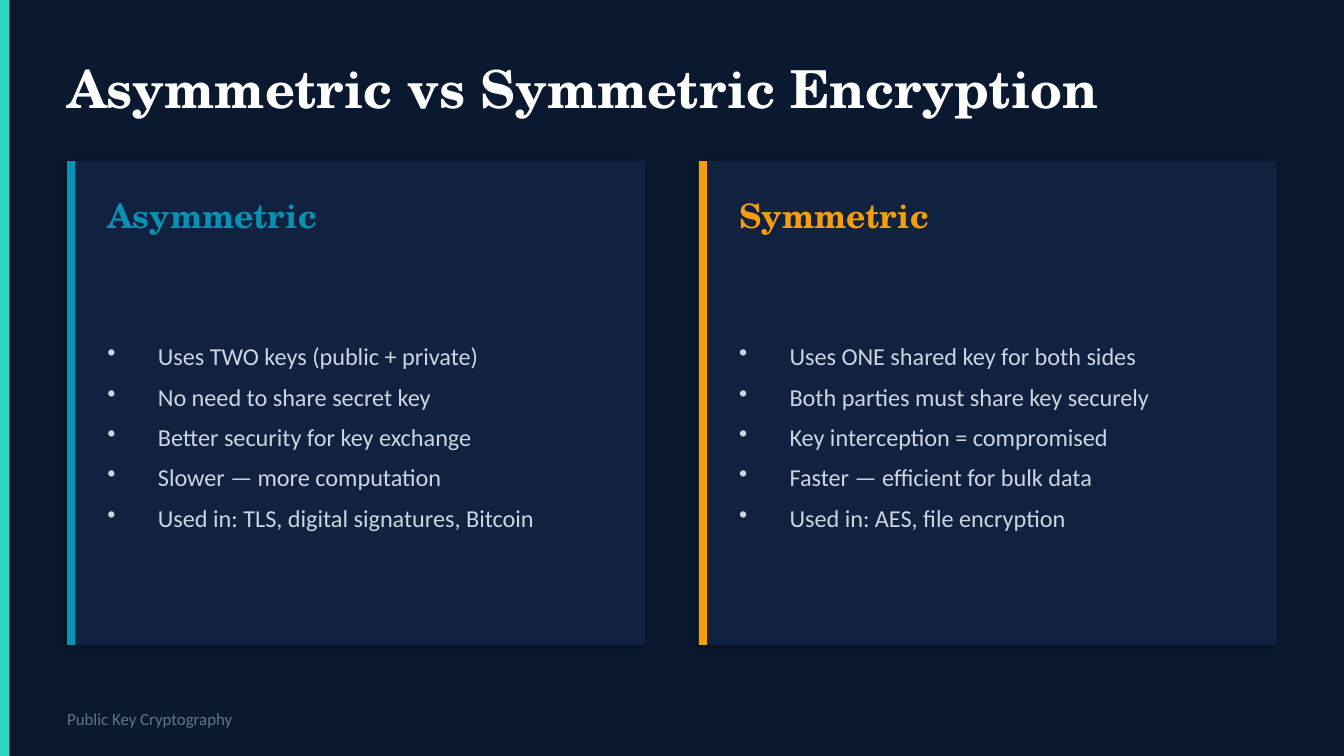
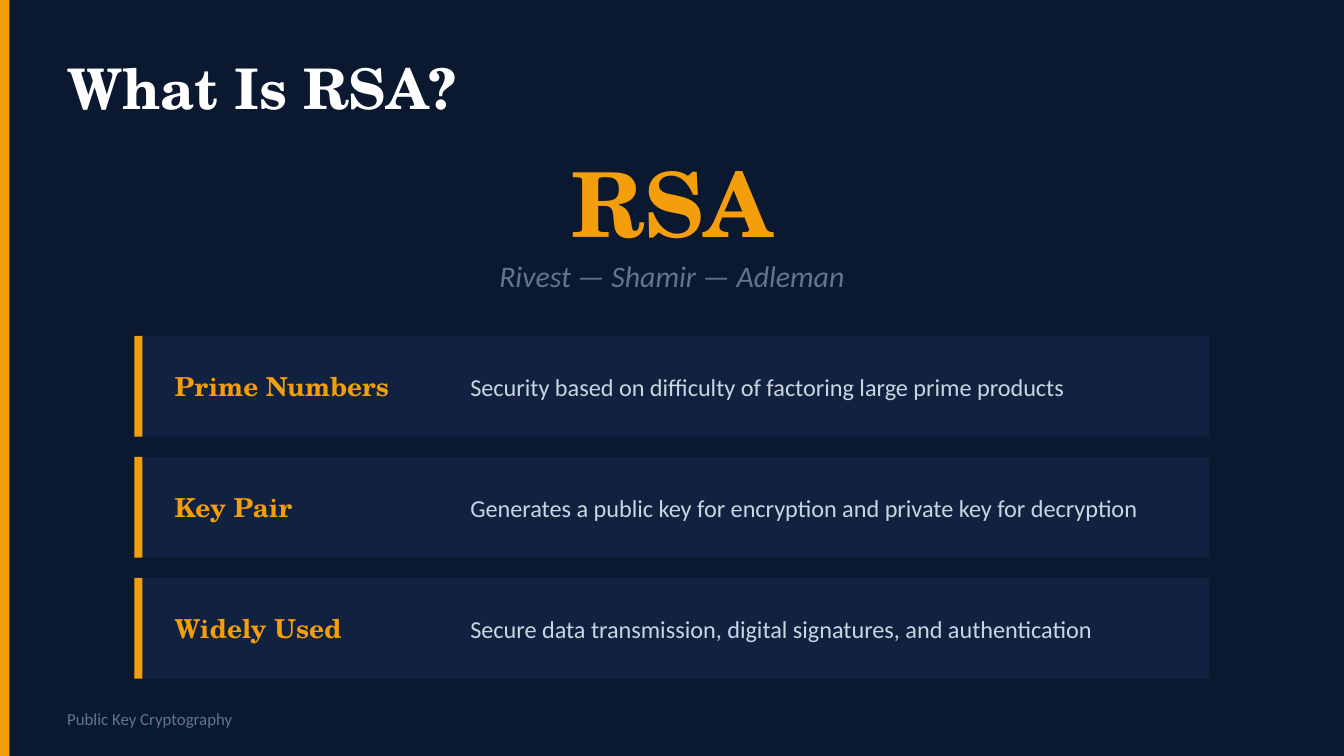
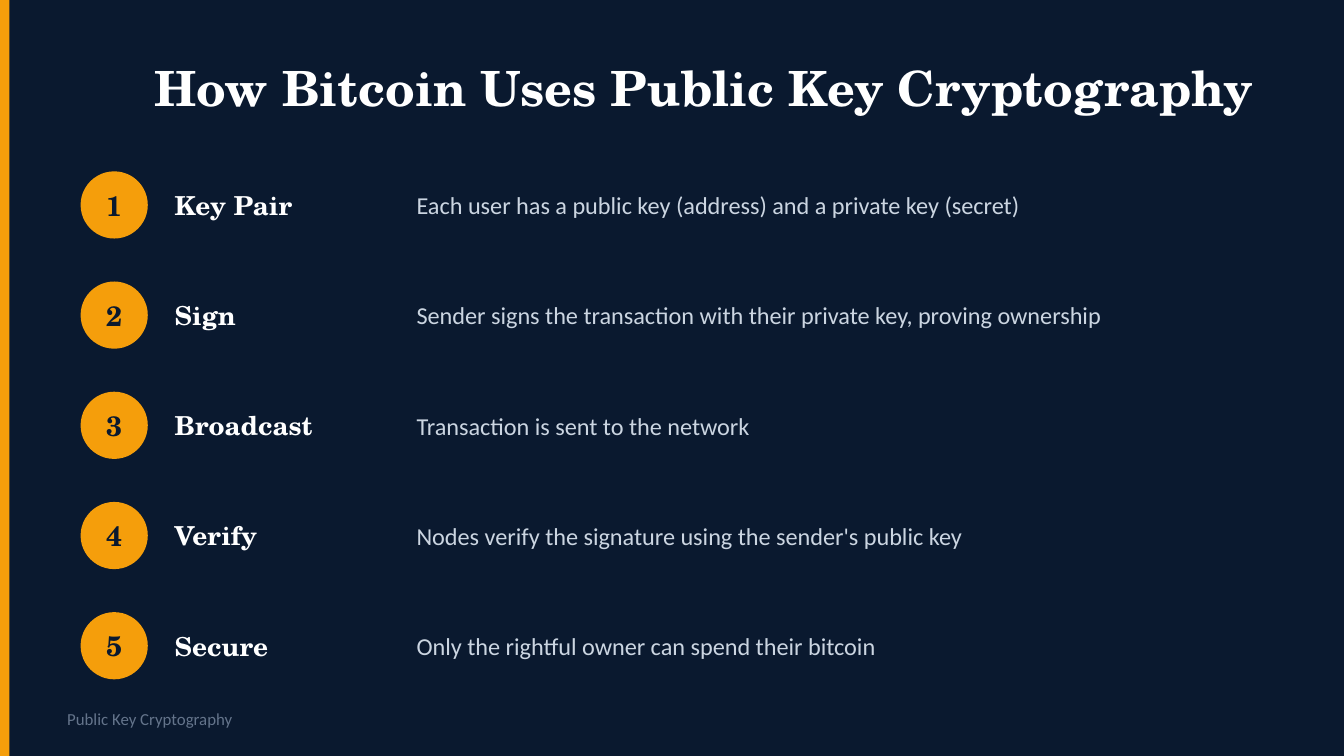
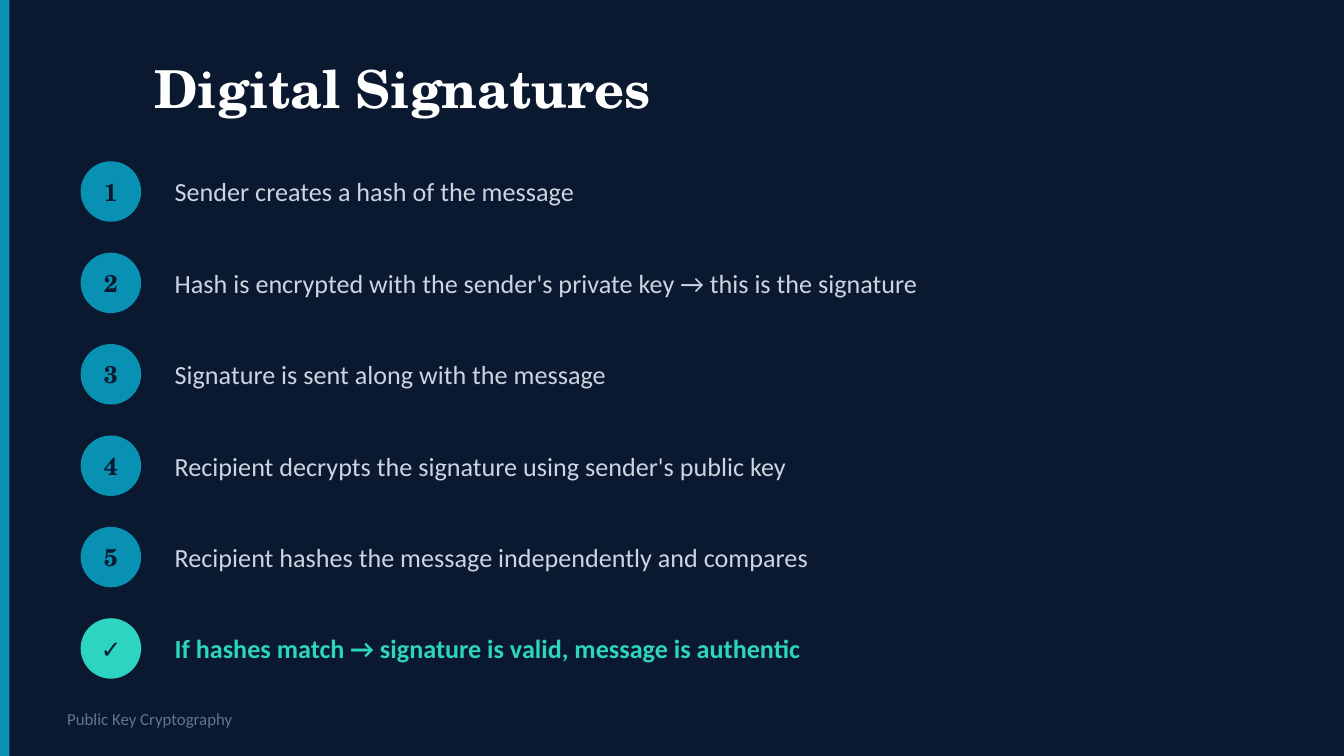
from dataclasses import dataclass
from typing import NamedTuple

import lxml.etree
import pptx
import pptx.dml.color
import pptx.enum.shapes
import pptx.enum.text
import pptx.oxml.ns
import pptx.presentation
import pptx.shapes.autoshape
import pptx.slide
import pptx.util

# The grid: square cells of 0.1 inch, 100 columns by 56.25 rows
CELL = 0.1
COLUMNS, ROWS = 100, 56.25
MARGIN = 5
CONTENT_WIDTH = COLUMNS - 2 * MARGIN
STRIPE_WIDTH = 0.6

NAVY, PANEL = "0A192F", "112240"
WHITE, LIGHT, GREY = "FFFFFF", "CBD5E1", "64748B"
TEAL, BLUE, AMBER = "2DD4BF", "0891B2", "F59E0B"

SERIF, SANS = "TeX Gyre Schola", "Calibri"
CENTER = pptx.enum.text.PP_ALIGN.CENTER
LEFT = pptx.enum.text.PP_ALIGN.LEFT
RECTANGLE = pptx.enum.shapes.MSO_SHAPE.RECTANGLE
OVAL = pptx.enum.shapes.MSO_SHAPE.OVAL


class Box(NamedTuple):
    """A rectangle measured in grid cells."""
    left: float
    top: float
    width: float
    height: float

    def lengths(self) -> list[pptx.util.Length]:
        return [pptx.util.Inches(cells * CELL) for cells in self]


@dataclass(frozen=True)
class Card:
    heading: str
    color: str
    points: list[str]


@dataclass(frozen=True)
class Fact:
    label: str
    text: str


@dataclass(frozen=True)
class Step:
    mark: str
    text: str
    label: str = ""
    color: str = LIGHT
    bold: bool = False


@dataclass(frozen=True)
class StepList:
    """The measures that all steps of one slide share."""
    top: float
    pitch: float
    height: float
    circle: float
    mark_size: int
    text_left: float
    text_size: int
    color: str


def rgb(color: str) -> pptx.dml.color.RGBColor:
    return pptx.dml.color.RGBColor.from_string(color)


def add_filled(slide: pptx.slide.Slide, box: Box, color: str,
               kind=RECTANGLE) -> pptx.shapes.autoshape.Shape:
    shape = slide.shapes.add_shape(kind, *box.lengths())
    shape.shadow.inherit = False
    shape.fill.solid()
    shape.fill.fore_color.rgb = rgb(color)
    shape.line.fill.background()
    return shape


def add_drop_shadow(shape: pptx.shapes.autoshape.Shape) -> None:
    effects = shape._element.spPr.find(pptx.oxml.ns.qn("a:effectLst"))
    shadow = lxml.etree.SubElement(
        effects, pptx.oxml.ns.qn("a:outerShdw"),
        blurRad=str(pptx.util.Pt(6)), dist=str(pptx.util.Pt(2)),
        dir=str(135 * 60000), algn="bl", rotWithShape="0")
    black = lxml.etree.SubElement(shadow, pptx.oxml.ns.qn("a:srgbClr"), val="000000")
    lxml.etree.SubElement(black, pptx.oxml.ns.qn("a:alpha"), val="25000")


def add_bullet(paragraph, indent: float = 0.375) -> None:
    properties = paragraph._p.get_or_add_pPr()
    properties.set("marL", str(pptx.util.Inches(indent)))
    properties.set("indent", str(-pptx.util.Inches(indent)))
    lxml.etree.SubElement(properties, pptx.oxml.ns.qn("a:buChar"), char="•")


def add_text(slide: pptx.slide.Slide, box: Box, *lines: str, size: int,
             color: str = LIGHT, font: str = SANS, bold: bool = False,
             italic: bool = False, align=LEFT, bullets: bool = False) -> None:
    """Add a box without insets, centred vertically, one paragraph a line."""
    frame = slide.shapes.add_textbox(*box.lengths()).text_frame
    frame.word_wrap = True
    frame.vertical_anchor = pptx.enum.text.MSO_ANCHOR.MIDDLE
    frame.margin_left = frame.margin_top = frame.margin_right = frame.margin_bottom = 0
    for index, line in enumerate(lines):
        paragraph = frame.add_paragraph() if index else frame.paragraphs[0]
        paragraph.alignment = align
        if bullets:
            add_bullet(paragraph)
            paragraph.space_after = pptx.util.Pt(6)
        run = paragraph.add_run()
        run.text = line
        run.font.name = font
        run.font.size = pptx.util.Pt(size)
        run.font.bold = bold
        run.font.italic = italic
        run.font.color.rgb = rgb(color)


def add_heading(slide: pptx.slide.Slide, box: Box, text: str, size: int,
                color: str, align=LEFT) -> None:
    add_text(slide, box, text, size=size, color=color, font=SERIF, bold=True, align=align)


def add_panel(slide: pptx.slide.Slide, box: Box, accent: str, shadow: bool = False) -> None:
    """Add a dark panel with a stripe of the accent colour at its left."""
    panel = add_filled(slide, box, PANEL)
    if shadow:
        add_drop_shadow(panel)
    add_filled(slide, box._replace(width=STRIPE_WIDTH), accent)


def add_slide(presentation: pptx.presentation.Presentation, title: str, accent: str,
              title_size: int, title_box: Box) -> pptx.slide.Slide:
    """Add a slide with the background, side band, title and footer."""
    slide = presentation.slides.add_slide(presentation.slide_layouts[6])
    slide.background.fill.solid()
    slide.background.fill.fore_color.rgb = rgb(NAVY)
    add_filled(slide, Box(0, 0, 0.7, ROWS), accent)
    add_heading(slide, title_box, title, title_size, WHITE)
    add_text(slide, Box(MARGIN, 52, 50, 3), "Public Key Cryptography", size=9, color=GREY)
    return slide


WIDE_TITLE = Box(MARGIN, 3, CONTENT_WIDTH, 7)
INDENTED_TITLE = Box(11.5, 3, 83, 7)


def add_cards(slide: pptx.slide.Slide, cards: list[Card]) -> None:
    gap = 4
    width = (CONTENT_WIDTH - gap * (len(cards) - 1)) / len(cards)
    for index, card in enumerate(cards):
        left = MARGIN + index * (width + gap)
        add_panel(slide, Box(left, 12, width, 36), card.color, shadow=True)
        add_heading(slide, Box(left + 3, 13.5, width - 5, 5), card.heading, 18, card.color)
        add_text(slide, Box(left + 3, 19.5, width - 5, 26), *card.points, size=13, bullets=True)


def add_facts(slide: pptx.slide.Slide, facts: list[Fact]) -> None:
    for index, fact in enumerate(facts):
        row = Box(10, 25 + 9 * index, 80, 7.5)
        add_panel(slide, row, AMBER)
        add_heading(slide, row._replace(left=13, width=22), fact.label, 14, AMBER)
        add_text(slide, row._replace(left=35, width=53), fact.text, size=13)


def add_steps(slide: pptx.slide.Slide, layout: StepList, steps: list[Step]) -> None:
    label_left = 13
    for index, step in enumerate(steps):
        top = layout.top + index * layout.pitch
        circle = Box(6, top + (layout.height - layout.circle) / 2, layout.circle, layout.circle)
        add_filled(slide, circle, step.color if step.bold else layout.color, OVAL)
        add_heading(slide, circle, step.mark, layout.mark_size, NAVY, CENTER)
        if step.label:
            label_box = Box(label_left, top, layout.text_left - label_left, layout.height)
            add_heading(slide, label_box, step.label, 14, WHITE)
        text_box = Box(layout.text_left, top, COLUMNS - MARGIN - layout.text_left, layout.height)
        add_text(slide, text_box, step.text, size=layout.text_size,
                 color=step.color, bold=step.bold)


def build_comparison(presentation: pptx.presentation.Presentation) -> None:
    slide = add_slide(presentation, "Asymmetric vs Symmetric Encryption", TEAL, 28, WIDE_TITLE)
    add_cards(slide, [
        Card("Asymmetric", BLUE, [
            "Uses TWO keys (public + private)",
            "No need to share secret key",
            "Better security for key exchange",
            "Slower — more computation",
            "Used in: TLS, digital signatures, Bitcoin",
        ]),
        Card("Symmetric", AMBER, [
            "Uses ONE shared key for both sides",
            "Both parties must share key securely",
            "Key interception = compromised",
            "Faster — efficient for bulk data",
            "Used in: AES, file encryption",
        ]),
    ])


def build_rsa(presentation: pptx.presentation.Presentation) -> None:
    slide = add_slide(presentation, "What Is RSA?", AMBER, 30, WIDE_TITLE)
    add_heading(slide, Box(MARGIN, 11, CONTENT_WIDTH, 8), "RSA", 48, AMBER, CENTER)
    add_text(slide, Box(10, 18.5, 80, 4), "Rivest — Shamir — Adleman",
             size=16, color=GREY, italic=True, align=CENTER)
    add_facts(slide, [
        Fact("Prime Numbers", "Security based on difficulty of factoring large prime products"),
        Fact("Key Pair", "Generates a public key for encryption and private key for decryption"),
        Fact("Widely Used", "Secure data transmission, digital signatures, and authentication"),
    ])


def build_bitcoin(presentation: pptx.presentation.Presentation) -> None:
    slide = add_slide(presentation, "How Bitcoin Uses Public Key Cryptography", AMBER, 26,
                      INDENTED_TITLE)
    layout = StepList(top=12, pitch=8.2, height=6.5, circle=5, mark_size=15,
                      text_left=31, text_size=13, color=AMBER)
    add_steps(slide, layout, [
        Step("1", "Each user has a public key (address) and a private key (secret)", "Key Pair"),
        Step("2", "Sender signs the transaction with their private key, proving ownership",
             "Sign"),
        Step("3", "Transaction is sent to the network", "Broadcast"),
        Step("4", "Nodes verify the signature using the sender's public key", "Verify"),
        Step("5", "Only the rightful owner can spend their bitcoin", "Secure"),
    ])


def build_signatures(presentation: pptx.presentation.Presentation) -> None:
    slide = add_slide(presentation, "Digital Signatures", BLUE, 28, INDENTED_TITLE)
    layout = StepList(top=11.5, pitch=6.8, height=5.5, circle=4.5, mark_size=13,
                      text_left=13, text_size=14, color=BLUE)
    add_steps(slide, layout, [
        Step("1", "Sender creates a hash of the message"),
        Step("2", "Hash is encrypted with the sender's private key → this is the signature"),
        Step("3", "Signature is sent along with the message"),
        Step("4", "Recipient decrypts the signature using sender's public key"),
        Step("5", "Recipient hashes the message independently and compares"),
        Step("✓", "If hashes match → signature is valid, message is authentic",
             color=TEAL, bold=True),
    ])


def main() -> None:
    presentation = pptx.Presentation()
    presentation.slide_width = pptx.util.Inches(COLUMNS * CELL)
    presentation.slide_height = pptx.util.Inches(ROWS * CELL)
    for build in (build_comparison, build_rsa, build_bitcoin, build_signatures):
        build(presentation)
    presentation.save("out.pptx")


if __name__ == "__main__":
    main()
